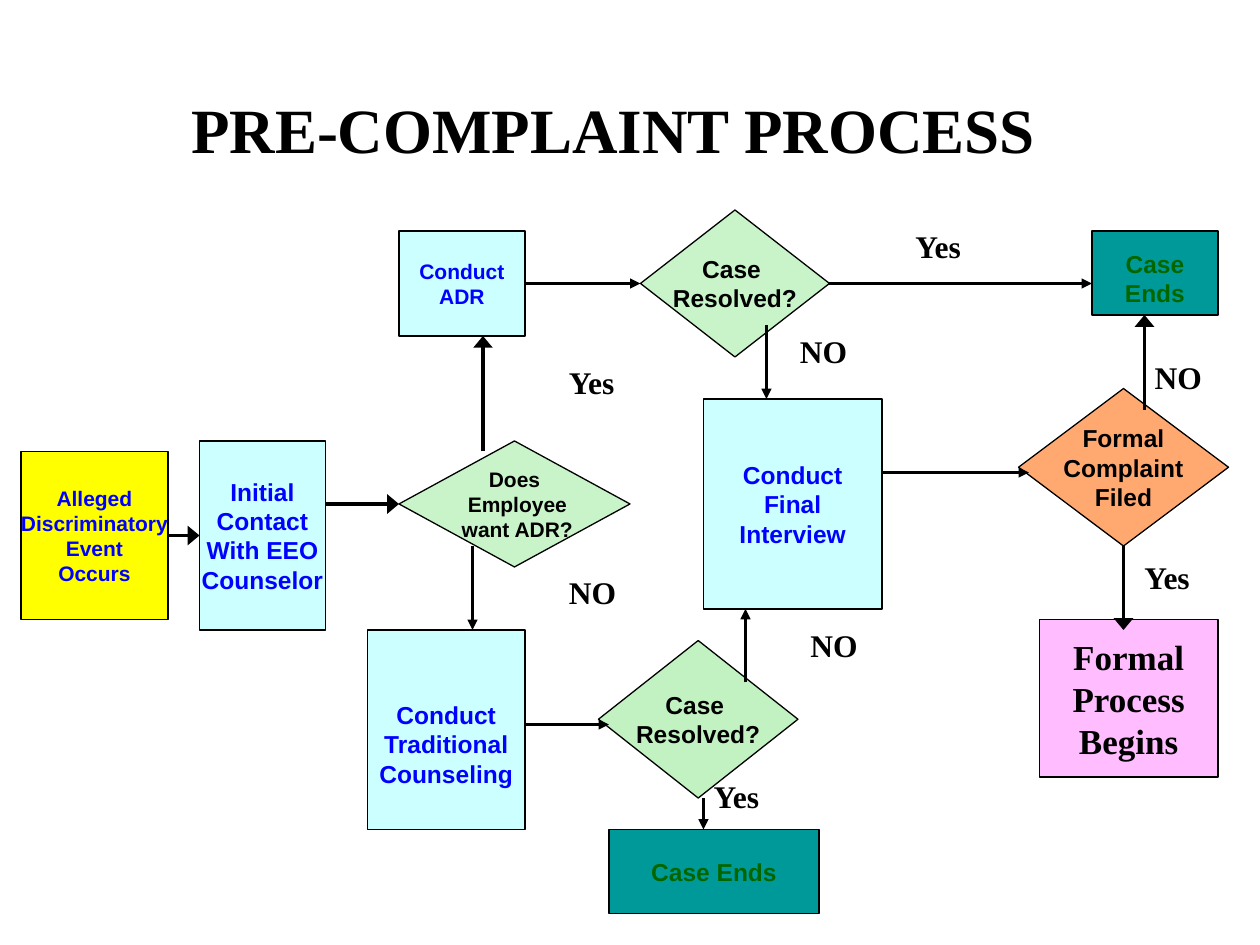
from dataclasses import dataclass

from lxml.etree import SubElement
from pptx import Presentation
from pptx.dml.color import RGBColor
from pptx.enum.shapes import MSO_CONNECTOR, MSO_SHAPE
from pptx.enum.text import MSO_ANCHOR, MSO_AUTO_SIZE, PP_ALIGN
from pptx.oxml.ns import qn
from pptx.util import Pt

EMU_PER_PX = 7620
TOP, LEFT, BOTTOM, RIGHT = range(4)


def px(length):
    return length * EMU_PER_PX


@dataclass(frozen=True)
class Theme:
    sans: str = "Arial"
    serif: str = "Times New Roman"
    ink: str = "000000"
    action_text: str = "0000FF"
    end_text: str = "006600"
    action: str = "CCFFFF"
    event: str = "FFFF00"
    decision: str = "00CC00"
    end: str = "009999"
    filed: str = "FF6600"
    formal: str = "FF66FF"
    title_size: int = 36
    formal_size: int = 20
    label_size: int = 18
    step_size: int = 14
    small_size: int = 12
    outline: float = 0.75
    thin: float = 1.5
    thick: float = 2.25


class FlowSlide:
    def __init__(self, slide, theme):
        self.slide = slide
        self.theme = theme

    def add_lines(self, frame, lines, size, color, font, align):
        for index, line in enumerate(lines):
            paragraph = frame.paragraphs[0] if index == 0 else frame.add_paragraph()
            paragraph.alignment = align
            run = paragraph.add_run()
            run.text = line
            run.font.name = font
            run.font.size = Pt(size)
            run.font.bold = True
            run.font.color.rgb = RGBColor.from_string(color)

    def title(self, text, left, top, width, height):
        heading = self.slide.shapes.title
        heading.left, heading.top = px(left), px(top)
        heading.width, heading.height = px(width), px(height)
        frame = heading.text_frame
        frame.auto_size = MSO_AUTO_SIZE.NONE
        frame.vertical_anchor = MSO_ANCHOR.TOP
        self.add_lines(frame, [text], self.theme.title_size, self.theme.ink,
                       self.theme.serif, PP_ALIGN.LEFT)

    def node(self, geometry, lines, place, fill, color, size=None, font=None,
             alpha=None, drop=0):
        step = self.slide.shapes.add_shape(geometry, *map(px, place))
        step.shadow.inherit = False
        step.fill.solid()
        step.fill.fore_color.rgb = RGBColor.from_string(fill)
        if alpha:
            tint = step._element.spPr.find(qn("a:solidFill")).find(qn("a:srgbClr"))
            SubElement(tint, qn("a:alpha"), val=str(alpha * 1000))
        step.line.color.rgb = RGBColor.from_string(self.theme.ink)
        step.line.width = Pt(self.theme.outline)
        frame = step.text_frame
        frame.word_wrap = False
        frame.vertical_anchor = MSO_ANCHOR.MIDDLE
        frame.margin_top = px(6 + drop)
        self.add_lines(frame, lines, size or self.theme.step_size, color,
                       font or self.theme.sans, PP_ALIGN.CENTER)
        return step

    def process(self, lines, place, fill, color, **style):
        return self.node(MSO_SHAPE.FLOWCHART_PROCESS, lines, place, fill, color, **style)

    def action(self, lines, place, **style):
        return self.process(lines, place, self.theme.action, self.theme.action_text, **style)

    def case_end(self, lines, place, **style):
        return self.process(lines, place, self.theme.end, self.theme.end_text, **style)

    def decision(self, lines, place, alpha, fill=None, **style):
        return self.node(MSO_SHAPE.FLOWCHART_DECISION, lines, place,
                         fill or self.theme.decision, self.theme.ink, alpha=alpha, **style)

    def label(self, text, left, top):
        answer = self.slide.shapes.add_textbox(px(left), px(top), px(70), px(48))
        frame = answer.text_frame
        frame.word_wrap = False
        frame.auto_size = MSO_AUTO_SIZE.SHAPE_TO_FIT_TEXT
        self.add_lines(frame, [text], self.theme.label_size, self.theme.ink,
                       self.theme.serif, PP_ALIGN.LEFT)

    def arrow(self, start, end, thick=False, source=None, target=None):
        flow = self.slide.shapes.add_connector(
            MSO_CONNECTOR.STRAIGHT, *map(px, start + end))
        if source:
            flow.begin_connect(*source)
        if target:
            flow.end_connect(*target)
        flow.line.color.rgb = RGBColor.from_string(self.theme.ink)
        flow.line.width = Pt(self.theme.thick if thick else self.theme.thin)
        properties = flow._element.spPr
        SubElement(properties.find(qn("a:ln")), qn("a:tailEnd"), type="triangle",
                   w="lg" if thick else "med", len="med")
        SubElement(properties, qn("a:effectLst"))


def main():
    deck = Presentation()
    deck.slide_width, deck.slide_height = px(1200), px(900)
    theme = Theme()
    chart = FlowSlide(deck.slides.add_slide(deck.slide_layouts[5]), theme)

    chart.title("PRE-COMPLAINT PROCESS", 170, 80, 910, 84)

    contact = chart.action(["Initial", "Contact", "With EEO", "Counselor"],
                           (190, 420, 120, 180))
    event = chart.process(["Alleged", "Discriminatory", "Event", "Occurs"],
                          (20, 430, 140, 160), theme.event, theme.action_text,
                          size=theme.small_size)
    wants_adr = chart.decision(["Does", " Employee", " want ADR?"],
                               (380, 420, 220, 120), 21, size=theme.small_size)
    adr = chart.action(["Conduct", "ADR"], (380, 220, 120, 100), size=theme.small_size)
    chart.action(["Conduct", "Traditional", "Counseling"], (350, 600, 150, 190), drop=27)
    adr_resolved = chart.decision(["Case ", "Resolved?"], (610, 200, 180, 140), 21)
    chart.action(["Conduct", "Final", "Interview"], (670, 380, 170, 200))
    chart.decision(["Case ", "Resolved?"], (570, 610, 190, 150), 24)
    chart.case_end(["Case Ends"], (580, 790, 200, 80))
    filed = chart.decision(["Formal", "Complaint", "Filed"], (970, 370, 200, 150), 56,
                           fill=theme.filed)
    chart.process(["Formal", "Process", "Begins"], (990, 590, 170, 150), theme.formal,
                  theme.ink, size=theme.formal_size, font=theme.serif, alpha=43)
    chart.case_end(["Case", "Ends"], (1040, 220, 120, 80), drop=10)

    chart.arrow((160, 510), (190, 510), True, (event, RIGHT), (contact, LEFT))
    chart.arrow((310, 480), (380, 480), True, target=(wants_adr, LEFT))
    chart.arrow((460, 430), (460, 320), True)
    chart.arrow((1070, 520), (1070, 600), True, source=(filed, BOTTOM))
    chart.arrow((1090, 390), (1090, 300), True)
    chart.arrow((500, 690), (580, 690))
    chart.arrow((670, 760), (670, 790))
    chart.arrow((790, 270), (1040, 270), source=(adr_resolved, RIGHT))
    chart.arrow((730, 310), (730, 380))
    chart.arrow((710, 650), (710, 580))
    chart.arrow((500, 270), (610, 270), source=(adr, RIGHT), target=(adr_resolved, LEFT))
    chart.arrow((450, 520), (450, 600))
    chart.arrow((840, 450), (980, 450))

    for answer, spots in {
        "Yes": [(530, 340), (860, 210), (668, 734), (1078, 526)],
        "NO": [(530, 540), (760, 590), (750, 310), (1088, 335)],
    }.items():
        for spot in spots:
            chart.label(answer, *spot)

    deck.save("out.pptx")


if __name__ == "__main__":
    main()
